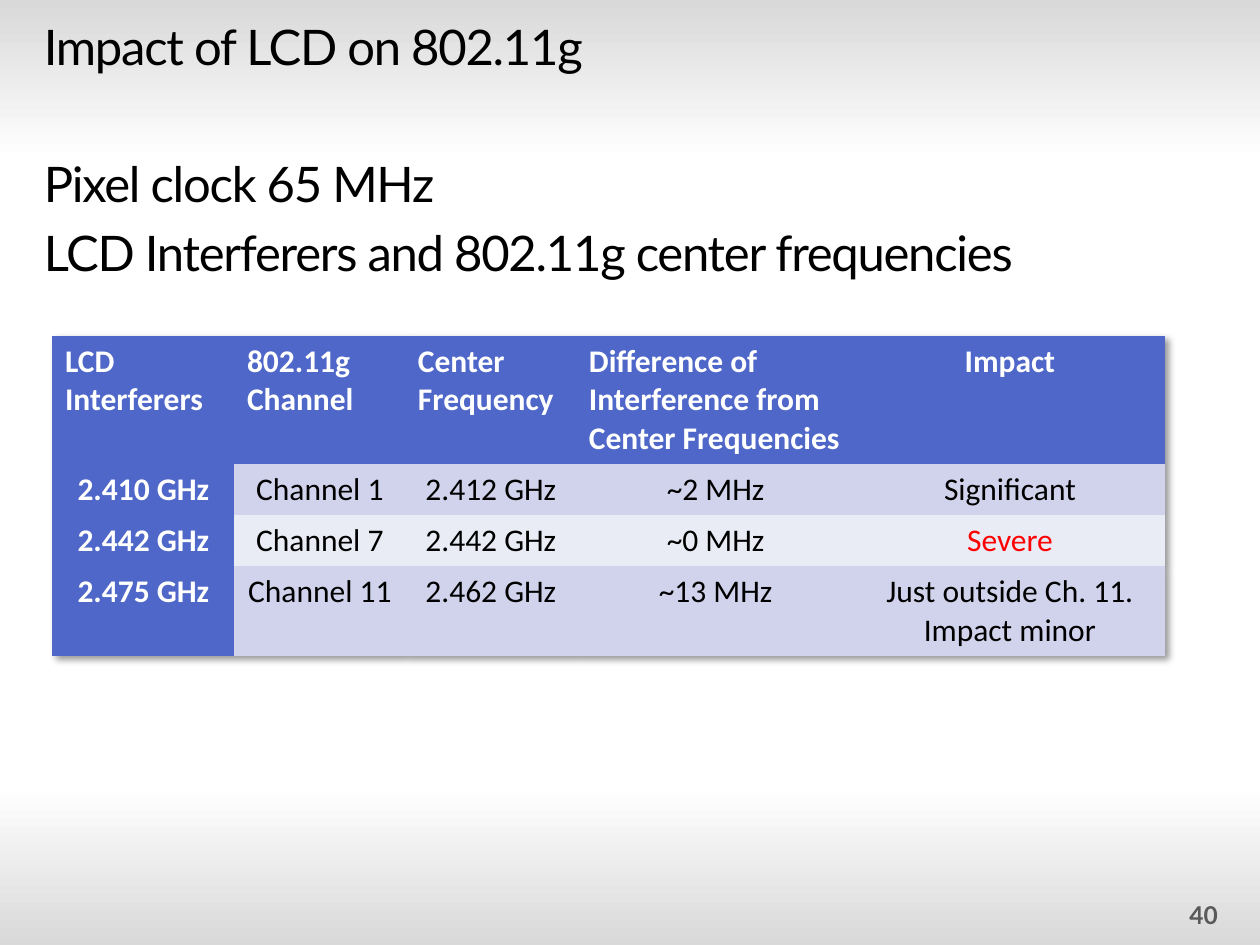
from dataclasses import dataclass

from lxml.etree import SubElement
from pptx import Presentation
from pptx.dml.color import RGBColor
from pptx.enum.text import MSO_ANCHOR, PP_ALIGN
from pptx.oxml import parse_xml
from pptx.oxml.ns import nsdecls, qn
from pptx.util import Pt


@dataclass(frozen=True)
class Theme:
    text_font: str = "Lato"
    table_font: str = "Calibri"
    body_size: float = 28
    table_size: float = 18
    number_size: float = 14
    black: str = "000000"
    white: str = "FFFFFF"
    grey: str = "595959"
    edge: str = "D9D9D9"
    header: str = "4E67C8"
    bands: tuple = ("D0D3EB", "E9EBF5")
    alert: str = "FF0000"


THEME = Theme()
NO_STYLE = "{2D5ABB26-0587-4C30-8999-92F81FD0307C}"

LINES = [
    "Impact of LCD on 802.11g",
    "Pixel clock 65 MHz",
    "LCD Interferers and 802.11g center frequencies",
]
COL_WIDTHS = [104, 97.7, 97.7, 159.2, 177.2]
ROW_HEIGHTS = [73.2, 29.2, 29.2, 51.2]
ROWS = [
    ["LCD \vInterferers", "802.11g Channel", "Center Frequency",
     "Difference of Interference from Center Frequencies", "Impact"],
    ["2.410 GHz", "Channel 1", "2.412 GHz", "~2 MHz", "Significant"],
    ["2.442 GHz", "Channel 7", "2.442 GHz", "~0 MHz", "Severe"],
    ["2.475 GHz", "Channel 11", "2.462 GHz", "~13 MHz",
     "Just outside Ch. 11. Impact minor"],
]


def write(p, text, *, font, size, color, bold=False, align=PP_ALIGN.LEFT,
          before=0, spacing=None):
    """Fill a paragraph with text in one format."""
    p.text = text
    p.alignment = align
    p.space_before = Pt(before)
    for r in p.runs:
        r.font.name = font
        r.font.size = Pt(size)
        r.font.bold = bold
        r.font.color.rgb = RGBColor.from_string(color)
        if spacing is not None:
            r.font._element.set("spc", str(round(spacing * 100)))


def add_text_frame(s, left, top, width, height, anchor=MSO_ANCHOR.TOP):
    tf = s.shapes.add_textbox(Pt(left), Pt(top), Pt(width), Pt(height)).text_frame
    tf.word_wrap = True
    tf.vertical_anchor = anchor
    return tf


def set_background(s):
    fill = s.background.fill
    fill.gradient()
    fill.gradient_angle = 270
    stops = s.element.find(".//" + qn("a:gsLst"))
    for stop in list(stops):
        stops.remove(stop)
    for pos, color in [(0, THEME.edge), (17, THEME.white),
                       (83, THEME.white), (100, THEME.edge)]:
        stop = SubElement(stops, qn("a:gs"), pos=str(pos * 1000))
        SubElement(stop, qn("a:srgbClr"), val=color)


def add_body(s):
    tf = add_text_frame(s, 18, 6, 684, 492)
    gap = 0.2 * THEME.body_size
    # The heading stands one full line above the statements
    befores = [0, 2 * gap + 1.2 * THEME.body_size, gap]
    for i, (line, before) in enumerate(zip(LINES, befores)):
        p = tf.add_paragraph() if i else tf.paragraphs[0]
        write(p, line, font=THEME.text_font, size=THEME.body_size,
              color=THEME.black, before=before, spacing=-0.7)


def add_page_number(s):
    tf = add_text_frame(s, 535, 510.5, 168, 24, MSO_ANCHOR.MIDDLE)
    write(tf.paragraphs[0], "40", font=THEME.text_font, size=THEME.number_size,
          color=THEME.grey, bold=True, align=PP_ALIGN.RIGHT)


def add_shadow(table):
    pr = table._tbl.tblPr
    pr.find(qn("a:tableStyleId")).text = NO_STYLE
    pr.insert(0, parse_xml(
        f'<a:effectLst {nsdecls("a")}>'
        '<a:outerShdw blurRad="50800" dist="38100" dir="2700000" algn="tl" rotWithShape="0">'
        '<a:srgbClr val="000000"><a:alpha val="40000"/></a:srgbClr>'
        '</a:outerShdw></a:effectLst>'))


def add_interference_table(s):
    table = s.shapes.add_table(
        len(ROWS), len(COL_WIDTHS), Pt(30), Pt(192),
        Pt(sum(COL_WIDTHS)), Pt(sum(ROW_HEIGHTS))).table
    add_shadow(table)
    for col, width in zip(table.columns, COL_WIDTHS):
        col.width = Pt(width)
    for row, height in zip(table.rows, ROW_HEIGHTS):
        row.height = Pt(height)
    for i, values in enumerate(ROWS):
        for j, value in enumerate(values):
            heading = i == 0 or j == 0
            fill = THEME.header if heading else THEME.bands[(i - 1) % 2]
            color = THEME.white if heading else THEME.black
            if value == "Severe":
                color = THEME.alert
            left = i == 0 and value != "Impact"
            cell = table.cell(i, j)
            cell.fill.solid()
            cell.fill.fore_color.rgb = RGBColor.from_string(fill)
            write(cell.text_frame.paragraphs[0], value, font=THEME.table_font,
                  size=THEME.table_size, color=color, bold=heading,
                  align=PP_ALIGN.LEFT if left else PP_ALIGN.CENTER)


def main():
    prs = Presentation()
    prs.slide_width, prs.slide_height = Pt(720), Pt(540)
    s = prs.slides.add_slide(prs.slide_layouts[6])
    set_background(s)
    add_body(s)
    add_page_number(s)
    add_interference_table(s)
    prs.save("out.pptx")


if __name__ == "__main__":
    main()
